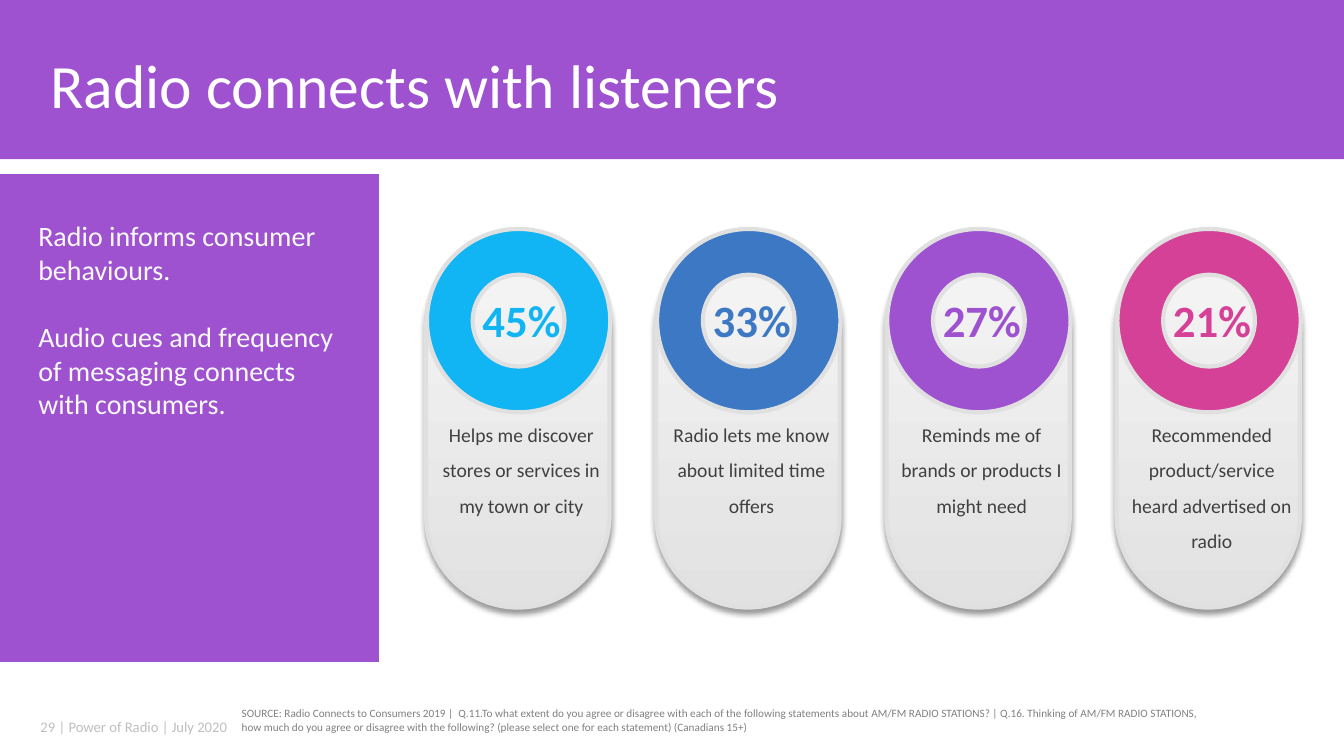
import pptx
import pptx.util
import pptx.dml.color
import pptx.enum.shapes
import pptx.enum.text
import pptx.oxml

Cm, Pt = pptx.util.Cm, pptx.util.Pt
SHAPE = pptx.enum.shapes.MSO_SHAPE
ALIGN = pptx.enum.text.PP_ALIGN
ANCHOR = pptx.enum.text.MSO_ANCHOR
AUTO = pptx.enum.text.MSO_AUTO_SIZE
NS = 'xmlns:a="http://schemas.openxmlformats.org/drawingml/2006/main"'

PURPLE = "9F52D0"
CARDS = [
    ("45%", "12B5F3", "Helps me discover stores or services in my town or city"),
    ("33%", "3C78C3", "Radio lets me know about limited time offers"),
    ("27%", PURPLE, "Reminds me of brands or products I might need"),
    ("21%", "D64198", "Recommended product/service heard advertised on radio"),
]
CARD_PITCH = 5.8
SOURCE = (
    "SOURCE: Radio Connects to Consumers 2019 |  Q.11.To what extent do you agree or "
    "disagree with each of the following statements about AM/FM RADIO STATIONS? | "
    "Q.16. Thinking of AM/FM RADIO STATIONS, how much do you agree or disagree with "
    "the following? (please select one for each statement) (Canadians 15+)"
)


def rgb(color):
    return pptx.dml.color.RGBColor.from_string(color)


def write(tf, *texts, size, color, bold=False, align=ALIGN.LEFT, line=1.0,
          gap=0, after=0, anchor=ANCHOR.TOP, inset=None, grow=True):
    """Fill a text frame with one paragraph per text, gap points apart."""
    tf.word_wrap = True
    tf.vertical_anchor = anchor
    tf.auto_size = AUTO.SHAPE_TO_FIT_TEXT if grow else AUTO.NONE
    if inset is not None:
        tf.margin_left = tf.margin_right = Cm(inset)
        tf.margin_top = tf.margin_bottom = Cm(inset / 2)
    for i, text in enumerate(texts):
        p = tf.add_paragraph() if i else tf.paragraphs[0]
        p.alignment, p.line_spacing = align, line
        p.space_before, p.space_after = Pt(gap if i else 0), Pt(after)
        r = p.add_run()
        r.text = text
        r.font.name, r.font.size, r.font.bold = "Calibri", Pt(size), bold
        r.font.color.rgb = rgb(color)


class Deck:
    """Holds the presentation, its outline colour and the current slide."""

    outline = "E0E0E0"

    def __init__(self):
        self.prs = pptx.Presentation()
        self.prs.slide_width, self.prs.slide_height = Cm(33.87), Cm(19.05)
        self.s = self.prs.slides.add_slide(self.prs.slide_layouts[1])

    def shape(self, kind, *box, fill=None, outlined=False):
        sp = self.s.shapes.add_shape(kind, *map(Cm, box))
        sp.shadow.inherit = False
        if fill:
            sp.fill.solid()
            sp.fill.fore_color.rgb = rgb(fill)
        if outlined:
            sp.line.color.rgb = rgb(self.outline)
            sp.line.width = Pt(3)
        else:
            sp.line.fill.background()
        return sp

    def pill(self, *box):
        """Rounded card with a grey gradient and a soft shadow below."""
        sp = self.shape(SHAPE.ROUNDED_RECTANGLE, *box, outlined=True)
        sp.adjustments[0] = 0.5
        sp.fill.gradient()
        sp.fill.gradient_angle = 90
        for stop, color in zip(sp.fill.gradient_stops, ("E2E2E2", "F5F5F5")):
            stop.color.rgb = rgb(color)
        effects = sp._element.spPr.find(pptx.oxml.ns.qn("a:effectLst"))
        effects.append(pptx.oxml.parse_xml(
            f'<a:outerShdw {NS} blurRad="{Pt(4)}" dist="{Pt(3)}" dir="5400000" '
            'algn="t" rotWithShape="0"><a:srgbClr val="000000">'
            '<a:alpha val="40000"/></a:srgbClr></a:outerShdw>'))

    def text(self, *box, texts, **style):
        sp = self.s.shapes.add_textbox(*map(Cm, box))
        write(sp.text_frame, *texts, **style)

    def placeholder(self, idx, *box, texts, **style):
        """Move a placeholder to box, above the shapes so far, without bullets."""
        sp = self.s.placeholders[idx]
        sp.left, sp.top, sp.width, sp.height = map(Cm, box)
        self.s.shapes._spTree.append(sp._element)
        write(sp.text_frame, *texts, **style)
        for p in sp.text_frame.paragraphs:
            pPr = p._p.get_or_add_pPr()
            pPr.set("marL", "0")
            pPr.set("indent", "0")
            pPr.append(pptx.oxml.parse_xml(f"<a:buNone {NS}/>"))

    def card(self, left, percent, color, caption):
        self.pill(left, 5.94, 4.62, 9.37)
        self.shape(SHAPE.DONUT, left + 0.02, 5.77, 4.62, 4.62, fill=color, outlined=True)
        self.text(left + 1.3, 7.37, 2.21, 1.37, texts=[percent], size=32, color=color,
                  bold=True, align=ALIGN.CENTER, anchor=ANCHOR.MIDDLE, inset=0)
        self.text(left + 0.33, 10.36, 4.14, 3.86, texts=[caption], size=14,
                  color="404040", align=ALIGN.CENTER, line=1.5, after=10, inset=0)


def main():
    deck = Deck()
    deck.shape(SHAPE.RECTANGLE, 0, 0, 33.87, 4.01, fill=PURPLE)
    deck.placeholder(0, 1.02, 0.38, 31.75, 3.68, texts=["Radio connects with listeners"],
                     size=44, color="FFFFFF", line=0.9, anchor=ANCHOR.MIDDLE, grow=False)
    deck.shape(SHAPE.RECTANGLE, 0, 4.39, 9.55, 12.29, fill=PURPLE)
    deck.placeholder(1, 0.71, 5.38, 8.08, 5.38, size=20, color="F9F9F9", gap=24, texts=[
        "Radio informs consumer behaviours.",
        "Audio cues and frequency of messaging connects with consumers."])
    for i, card in enumerate(CARDS):
        deck.card(10.74 + i * CARD_PITCH, *card)
    deck.text(0.69, 17.81, 7.59, 1.02, texts=["29 | Power of Radio | July 2020"],
              size=10.5, color="BFBFBF", anchor=ANCHOR.MIDDLE, inset=0.33, grow=False)
    deck.text(5.84, 17.68, 25.1, 2.06, texts=[SOURCE], size=8, color="808080")
    deck.prs.save("out.pptx")


if __name__ == "__main__":
    main()
